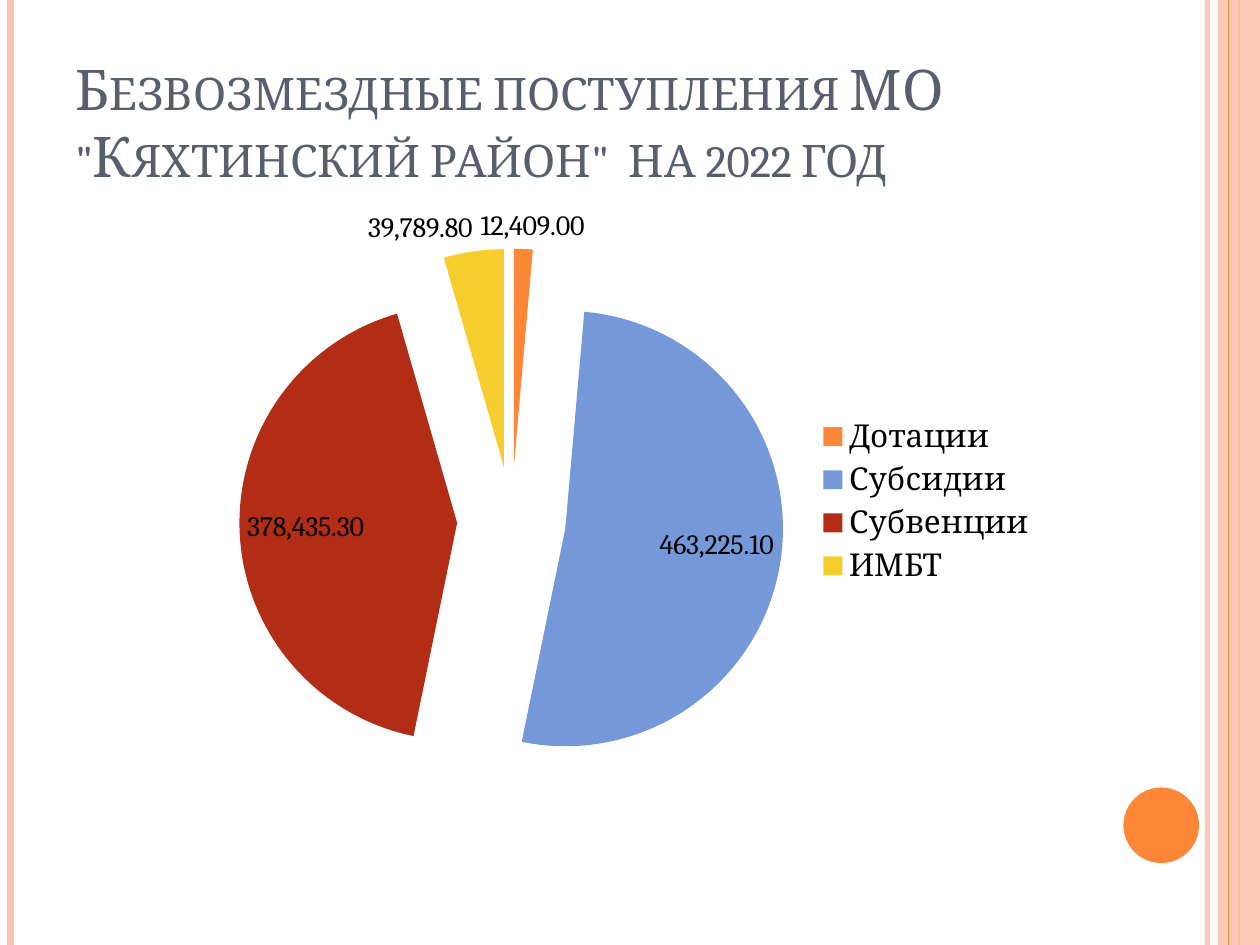
from lxml.etree import SubElement
from pptx import Presentation
from pptx.chart.data import CategoryChartData
from pptx.dml.color import RGBColor
from pptx.enum.chart import XL_CHART_TYPE, XL_LABEL_POSITION, XL_LEGEND_POSITION
from pptx.enum.shapes import MSO_CONNECTOR, MSO_SHAPE
from pptx.enum.text import MSO_ANCHOR
from pptx.oxml import parse_xml
from pptx.oxml.ns import nsdecls, qn
from pptx.util import Pt

PEACH = RGBColor(0xFE, 0xC3, 0xAE)
ORANGE = RGBColor(0xFE, 0x86, 0x37)
BLUE = RGBColor(0x75, 0x98, 0xD9)
RED = RGBColor(0xB3, 0x2C, 0x16)
YELLOW = RGBColor(0xF5, 0xCD, 0x2D)
SLATE = RGBColor(0x57, 0x5F, 0x6D)
BLACK = RGBColor(0, 0, 0)


class SlideBuilder:
    """Draws styled elements on the current slide."""

    font = "Cambria"
    width, height = 720, 540

    def __init__(self, prs):
        prs.slide_width, prs.slide_height = Pt(self.width), Pt(self.height)
        self.s = prs.slides.add_slide(prs.slide_layouts[6])

    def set_alpha(self, fill, percent):
        color = fill.find(".//" + qn("a:srgbClr"))
        SubElement(color, qn("a:alpha"), val=str(percent * 1000))

    def stripe(self, x, color, weight, alpha=100):
        line = self.s.shapes.add_connector(
            MSO_CONNECTOR.STRAIGHT, Pt(x), Pt(0), Pt(x), Pt(self.height))
        line.line.color.rgb = color
        line.line.width = Pt(weight)
        props = line._element.spPr
        if alpha < 100:
            self.set_alpha(props, alpha)
        SubElement(props, qn("a:effectLst"))

    def shape(self, kind, box, color, alpha=100):
        sp = self.s.shapes.add_shape(kind, *map(Pt, box))
        sp.shadow.inherit = False
        sp.fill.solid()
        sp.fill.fore_color.rgb = color
        sp.line.fill.background()
        if alpha < 100:
            self.set_alpha(sp._element.spPr, alpha)

    def style(self, font, size, color):
        font.name, font.size, font.color.rgb = self.font, Pt(size), color

    def title(self, text, box):
        tf = self.s.shapes.add_textbox(*map(Pt, box)).text_frame
        tf.word_wrap = True
        tf.vertical_anchor = MSO_ANCHOR.BOTTOM
        tf.text = text
        r = tf.paragraphs[0].runs[0]
        self.style(r.font, 32, SLATE)
        r.font._element.set("cap", "small")

    def pie(self, slices, box, explosion):
        data = CategoryChartData(number_format="#,##0.00")
        data.categories = [name for name, _, _ in slices]
        data.add_series("Series 1", [value for _, value, _ in slices])
        chart = self.s.shapes.add_chart(XL_CHART_TYPE.PIE, *map(Pt, box), data).chart
        chart.has_title = False
        self.style(chart.font, 18, BLACK)
        chart.has_legend = True
        chart.legend.position = XL_LEGEND_POSITION.RIGHT
        chart.legend.include_in_layout = False
        plot = chart.plots[0]
        plot.vary_by_categories = True
        series = plot.series[0]
        for i, (_, _, color) in enumerate(slices):
            fill = series.points[i].format.fill
            fill.solid()
            fill.fore_color.rgb = color
        series._element.find(qn("c:dPt")).addprevious(
            parse_xml(f'<c:explosion {nsdecls("c")} val="{explosion}"/>'))
        labels = series.data_labels
        labels.show_value = True
        labels.number_format = "#,##0.00"
        labels.number_format_is_linked = False
        labels.position = XL_LABEL_POSITION.BEST_FIT
        self.style(labels.font, 16, BLACK)


def main():
    prs = Presentation()
    b = SlideBuilder(prs)
    b.stripe(690, PEACH, 3, alpha=93)
    b.stripe(6, PEACH, 4.5)
    b.stripe(708, ORANGE, 1.5)
    b.shape(MSO_SHAPE.RECTANGLE, (696, 0, 24, b.height), PEACH, alpha=87)
    b.stripe(702, ORANGE, 0.75)
    b.shape(MSO_SHAPE.OVAL, (642, 450, 43.2, 43.2), ORANGE)
    b.title('Безвозмездные поступления МО "Кяхтинский район"  на 2022 год',
            (36, 21.6, 588, 90))
    b.pie([("Дотации", 12409, ORANGE),
           ("Субсидии", 463225.1, BLUE),
           ("Субвенции", 378435.3, RED),
           ("ИМБТ", 39789.8, YELLOW)],
          (120, 110, 480, 353), explosion=25)
    prs.save("out.pptx")


if __name__ == "__main__":
    main()
